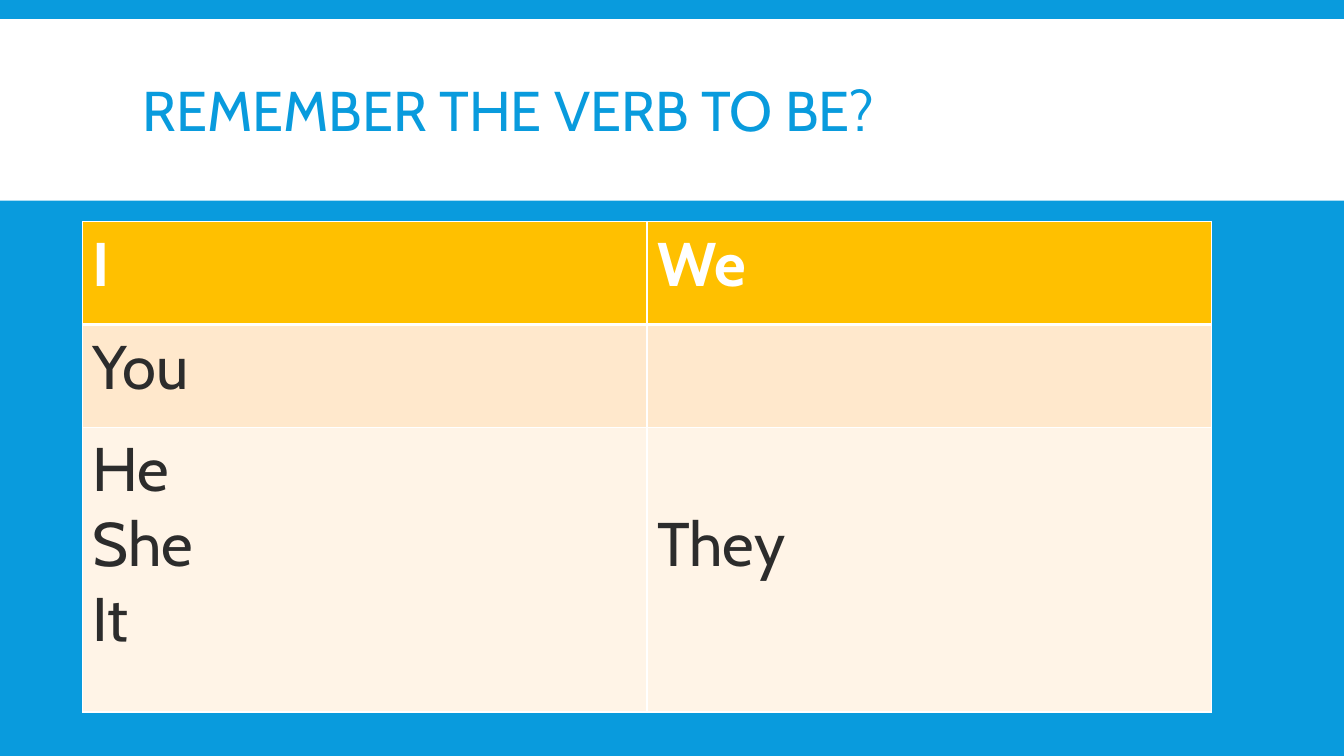
from lxml import etree
from pptx import Presentation
from pptx.dml.color import RGBColor
from pptx.enum import shapes, text
from pptx.oxml import ns
from pptx.util import Pt

# Content
TITLE = "REMEMBER THE VERB TO BE?"
PRONOUNS = [
    [["I"], ["We"]],
    [["You"], []],
    [["He", "She", "It"], ["They"]],
]

# Style: fill, text colour and bold for each row
ROW_STYLES = [
    ("FFC000", "FFFFFF", True),
    ("FFE8CC", "2C2C2C", False),
    ("FFF4E7", "2C2C2C", False),
]
FONT, BLUE, WHITE = "Cabin", "099BDD", "FFFFFF"
WIDTH, HEIGHT = 960, 540
COLUMN_WIDTH = 403.2
ROW_HEIGHTS = [73.4, 73.4, 203.4]
LINE_PITCH, CELL_MARGIN = 53.6, 3.6


def color(code):
    return RGBColor.from_string(code)


def add_run(paragraph, words, size, code, bold=False):
    run = paragraph.add_run()
    run.text = words
    run.font.name, run.font.size, run.font.bold = FONT, Pt(size), bold
    run.font.color.rgb = color(code)


def add_border(cell, side, width):
    line = etree.SubElement(cell._tc.get_or_add_tcPr(), ns.qn("a:ln" + side), w=str(Pt(width)))
    fill = etree.SubElement(line, ns.qn("a:solidFill"))
    etree.SubElement(fill, ns.qn("a:srgbClr"), val=WHITE)


# Slide and background
deck = Presentation()
deck.slide_width, deck.slide_height = Pt(WIDTH), Pt(HEIGHT)
slide = deck.slides.add_slide(deck.slide_layouts[6])
slide.background.fill.solid()
slide.background.fill.fore_color.rgb = color(BLUE)

# Title band
band = slide.shapes.add_shape(shapes.MSO_SHAPE.RECTANGLE, 0, Pt(13.7), Pt(WIDTH), Pt(129.6))
band.shadow.inherit = False
band.fill.solid()
band.fill.fore_color.rgb = color(WHITE)
band.line.fill.background()

# Title
title = slide.shapes.add_textbox(Pt(95), Pt(22.3), Pt(770.4), Pt(118.8)).text_frame
title.word_wrap = True
title.vertical_anchor = text.MSO_ANCHOR.MIDDLE
title.paragraphs[0].line_spacing = 0.85
add_run(title.paragraphs[0], TITLE, 40, BLUE)

# Pronoun table
pronouns = slide.shapes.add_table(
    len(PRONOUNS), 2, Pt(59), Pt(158.4), Pt(2 * COLUMN_WIDTH), Pt(sum(ROW_HEIGHTS))
).table
for column in pronouns.columns:
    column.width = Pt(COLUMN_WIDTH)

for r, (row, height, style) in enumerate(zip(PRONOUNS, ROW_HEIGHTS, ROW_STYLES)):
    pronouns.rows[r].height = Pt(height)
    row_fill, ink, bold = style
    for c, words in enumerate(row):
        cell = pronouns.cell(r, c)
        # A thick rule separates the header from the body
        for side in "LRTB":
            header_rule = (r, side) in [(0, "B"), (1, "T")]
            add_border(cell, side, 3 if header_rule else 1)
        cell.fill.solid()
        cell.fill.fore_color.rgb = color(row_fill)
        for i, word in enumerate(words):
            frame = cell.text_frame
            paragraph = frame.add_paragraph() if i else frame.paragraphs[0]
            add_run(paragraph, word, 44, ink, bold)

# "They" lines up with "She", one line down
pronouns.cell(2, 1).margin_top = Pt(CELL_MARGIN + LINE_PITCH)

deck.save("out.pptx")
